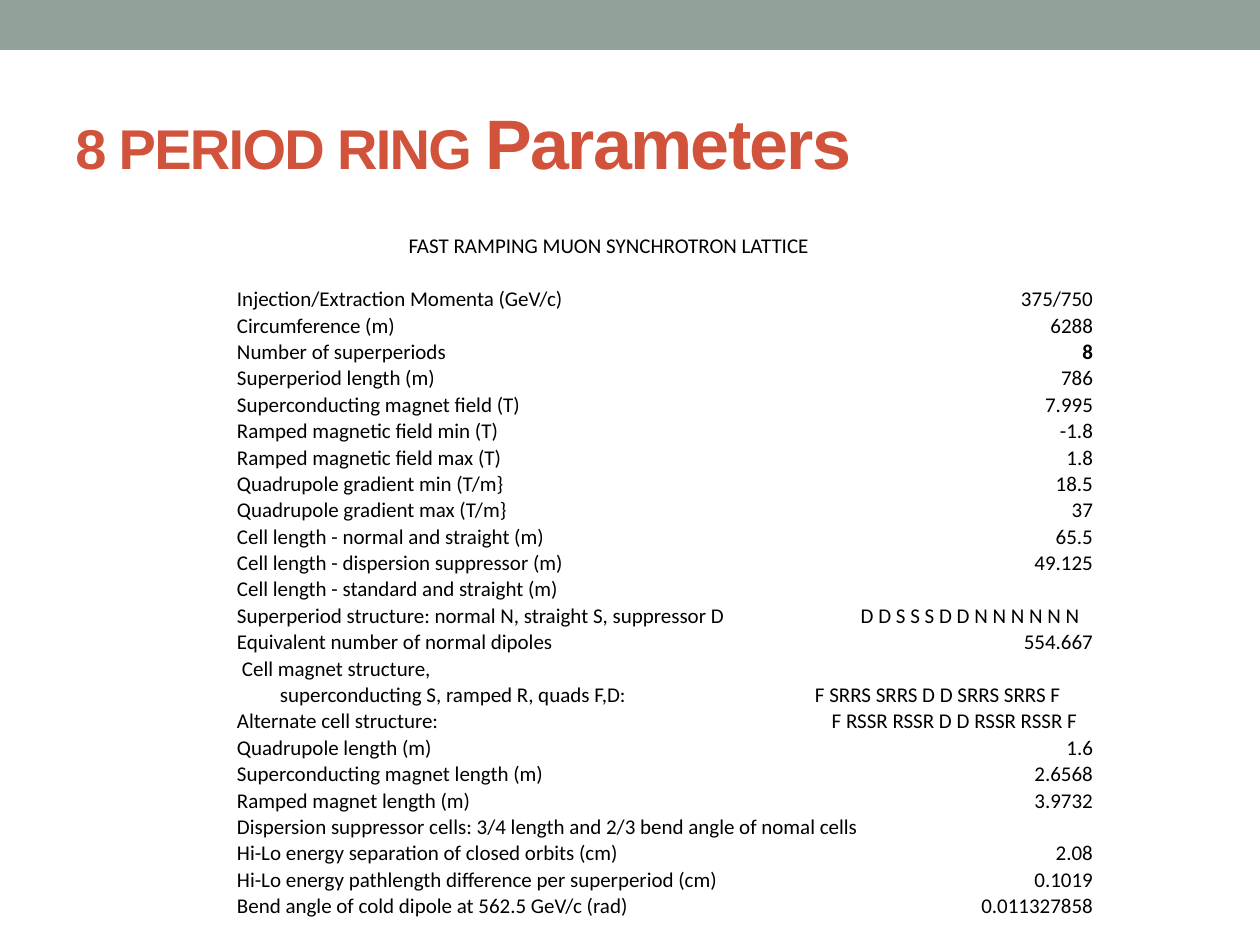
from lxml.etree import SubElement
from pptx import Presentation
from pptx.dml.color import RGBColor
from pptx.enum.shapes import MSO_SHAPE as SHAPE
from pptx.enum.text import MSO_ANCHOR as ANCHOR, PP_ALIGN as ALIGN
from pptx.oxml.ns import qn
from pptx.util import Emu, Pt

COLORS = {"band": "93A299", "title": "D2533C", "text": "000000"}
TITLE = [("8 PERIOD RING ", 32), ("Parameters", 40)]
HEADING = "FAST RAMPING MUON SYNCHROTRON LATTICE"

# label, columns it spans, value in the last column
PARAMETERS = [
    ("Injection/Extraction Momenta (GeV/c)", 3, "375/750"),
    ("Circumference (m)", 2, "6288"),
    ("Number of superperiods", 2, "8"),
    ("Superperiod length (m)", 2, "786"),
    ("Superconducting magnet field (T)", 2, "7.995"),
    ("Ramped magnetic field min (T)", 2, "-1.8"),
    ("Ramped magnetic field max (T)", 2, "1.8"),
    ("Quadrupole gradient min (T/m}", 2, "18.5"),
    ("Quadrupole gradient max (T/m}", 2, "37"),
    ("Cell length - normal and straight (m)", 2, "65.5"),
    ("Cell length - dispersion suppressor (m)", 3, "49.125"),
    ("Cell length - standard and straight (m)", 2, ""),
    ("Superperiod structure: normal N, straight S, suppressor D", 3, ""),
    ("Equivalent number of normal dipoles", 2, "554.667"),
    ("Cell magnet structure,", 2, ""),
    ("superconducting S, ramped R, quads F,D:\tF SRRS SRRS D D SRRS SRRS F", 5, ""),
    ("Alternate cell structure:", 2, ""),
    ("Quadrupole length (m)", 2, "1.6"),
    ("Superconducting magnet length (m)", 2, "2.6568"),
    ("Ramped magnet length (m)", 2, "3.9732"),
    ("Dispersion suppressor cells: 3/4 length and 2/3 bend angle of nomal cells", 4, ""),
    ("Hi-Lo energy separation of closed orbits (cm)", 3, "2.08"),
    ("Hi-Lo energy pathlength difference per superperiod (cm)", 3, "0.1019"),
    ("Bend angle of cold dipole at 562.5 GeV/c (rad)", 3, "0.011327858"),
]
# row: (text, left inset) in the last two columns
STRUCTURES = {14: ("D D S S S D D N N N N N N", 110),
              18: ("F RSSR RSSR D D RSSR RSSR F", 81)}
LABEL_INSETS = {16: 6, 17: 44}
BOLD_VALUE = "8"
COLS, FIRST_ROW = 5, 2
TAB = 535


def px(n):
    return Emu(round(n * 914400 / 126))


def add_run(p, text, font, size, color, bold=False):
    r = p.add_run()
    r.text = text
    r.font.name, r.font.size, r.font.bold = font, Pt(size), bold
    r.font.color.rgb = RGBColor.from_string(COLORS[color])
    return r


def fill_cell(row, col, text, span=1, inset=1, align=ALIGN.LEFT, bold=False):
    cell = table.cell(row, col)
    if span > 1:
        cell.merge(table.cell(row, col + span - 1))
    cell.margin_left = px(inset)
    p = cell.text_frame.paragraphs[0]
    p.alignment = align
    add_run(p, text, "Calibri", 12, "text", bold)
    if "\t" in text:
        tabs = SubElement(p._p.get_or_add_pPr(), qn("a:tabLst"))
        SubElement(tabs, qn("a:tab"), pos=str(px(TAB)), algn="l")


prs = Presentation()
prs.slide_width, prs.slide_height = px(1260), px(945)
slide = prs.slides.add_slide(prs.slide_layouts[6])

# Top band
band = slide.shapes.add_shape(SHAPE.RECTANGLE, 0, 0, px(1260), px(50))
band.shadow.inherit = False
band.fill.solid()
band.fill.fore_color.rgb = RGBColor.from_string(COLORS["band"])
band.line.fill.background()

# Title
tf = slide.shapes.add_textbox(px(63), px(73), px(1134), px(136)).text_frame
tf.word_wrap = True
tf.vertical_anchor = ANCHOR.MIDDLE
for text, size in TITLE:
    r = add_run(tf.paragraphs[0], text, "Arial", size, "title", True)
    r.font._element.set("spc", "-100")

# Empty table without style bands; small text size keeps empty rows low
rows = FIRST_ROW + len(PARAMETERS)
table = slide.shapes.add_table(rows, COLS, px(236), px(233), px(858), px(687)).table
table.first_row = table.horz_banding = False
for cell in table.iter_cells():
    cell.fill.background()
    cell.vertical_anchor = ANCHOR.BOTTOM
    cell.margin_left = cell.margin_right = cell.margin_top = px(1)
    cell.margin_bottom = 0
    SubElement(cell.text_frame.paragraphs[0]._p, qn("a:endParaRPr"), sz="1200")

# Table text
fill_cell(0, 1, HEADING, 3)
for row, (label, span, value) in enumerate(PARAMETERS, FIRST_ROW):
    fill_cell(row, 0, label, span, LABEL_INSETS.get(row, 1))
    if value:
        fill_cell(row, COLS - 1, value, align=ALIGN.RIGHT, bold=value == BOLD_VALUE)
for row, (text, inset) in STRUCTURES.items():
    fill_cell(row, COLS - 2, text, 2, inset)

prs.save("out.pptx")
